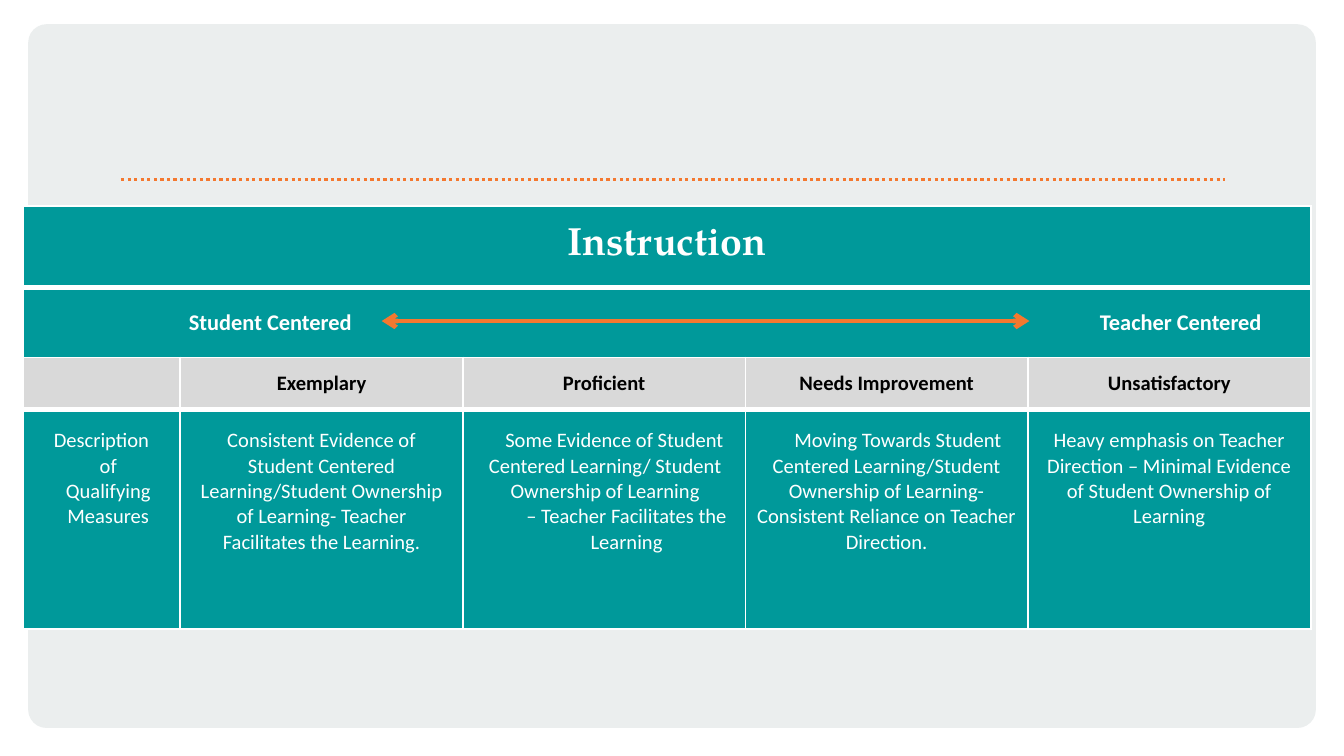
from lxml import etree
from pptx import Presentation
from pptx.dml.color import RGBColor
from pptx.enum.dml import MSO_LINE_DASH_STYLE as Dash
from pptx.enum.shapes import MSO_CONNECTOR as Connector, MSO_SHAPE as Shape
from pptx.enum.text import MSO_ANCHOR as Anchor, PP_ALIGN as Align
from pptx.oxml.ns import qn
from pptx.util import Pt

TEAL, GREY, PANEL, ORANGE = "00999A", "D9D9D9", "EBEEEE", "F4782F"
WHITE, BLACK = "FFFFFF", "000000"
LEFT, TOP = 12.2, 110.2
COLUMNS = [84.4] + [151.4] * 4
ROWS = [43.8, 37.5, 28.1, 117.4]
LEVELS = ["Exemplary", "Proficient", "Needs Improvement", "Unsatisfactory"]
LABEL_TABS = [89, 577]

# One list per column: (text, left margin, first-line indent, right margin)
MEASURES = [
    [("Description of Qualifying Measures", 19.4, -7.2, 12.2)],
    [("Consistent Evidence of Student Centered Learning/Student Ownership "
      "of Learning- Teacher Facilitates the Learning.", 8, 0, 8)],
    [("Some Evidence of Student Centered Learning/ Student Ownership of Learning",
      8.6, 10, 7.5),
     ("– Teacher Facilitates the Learning", 24, 0, 0)],
    [("Moving Towards Student Centered Learning/Student Ownership of Learning- "
      "Consistent Reliance on Teacher Direction.", 5.8, 12.2, 6)],
    [("Heavy emphasis on Teacher Direction – Minimal Evidence of Student "
      "Ownership of Learning", 5.8, 0, 6)],
]


def color(hex_value):
    return RGBColor.from_string(hex_value)


def add_panel(page):
    panel = page.shapes.add_shape(
        Shape.ROUNDED_RECTANGLE, Pt(15.1), Pt(13), Pt(689.8), Pt(377))
    panel.adjustments[0] = 0.026
    panel.shadow.inherit = False
    panel.fill.solid()
    panel.fill.fore_color.rgb = color(PANEL)
    panel.line.fill.background()


def add_line(page, start, end, y, width, dash=None, arrows=False):
    line = page.shapes.add_connector(
        Connector.STRAIGHT, Pt(start), Pt(y), Pt(end), Pt(y))
    line.line.color.rgb = color(ORANGE)
    line.line.width = Pt(width)
    if dash:
        line.line.dash_style = dash
    if arrows:
        outline = line.line._get_or_add_ln()
        for tag in ("a:headEnd", "a:tailEnd"):
            etree.SubElement(outline, qn(tag), type="arrow")
    etree.SubElement(line._element.spPr, qn("a:effectLst"))


def style_cell(cell, fill, top=1, bottom=1):
    cell.margin_left = cell.margin_right = cell.margin_top = cell.margin_bottom = 0
    cell.vertical_anchor = Anchor.MIDDLE
    cell.fill.solid()
    cell.fill.fore_color.rgb = color(fill)
    sides = [("a:lnL", 1), ("a:lnR", 1), ("a:lnT", top), ("a:lnB", bottom)]
    for place, (tag, width) in enumerate(sides):
        border = etree.Element(qn(tag), w=str(Pt(width)))
        solid = etree.SubElement(border, qn("a:solidFill"))
        etree.SubElement(solid, qn("a:srgbClr"), val=WHITE)
        cell._tc.get_or_add_tcPr().insert(place, border)


def add_span(para, text, size, ink=WHITE, bold=False, font="Calibri"):
    span = para.add_run()
    span.text = text
    span.font.name = font
    span.font.size = Pt(size)
    span.font.bold = bold
    span.font.color.rgb = color(ink)


def fill_centered(cell, text, size, **style):
    para = cell.text_frame.paragraphs[0]
    para.alignment = Align.CENTER
    add_span(para, text, size, **style)


def fill_scale_labels(cell):
    para = cell.text_frame.paragraphs[0]
    para.alignment = Align.LEFT
    tabs = etree.SubElement(para._p.get_or_add_pPr(), qn("a:tabLst"))
    for stop in LABEL_TABS:
        etree.SubElement(tabs, qn("a:tab"), pos=str(Pt(stop)), algn="l")
    for label in ("Student Centered", "Teacher Centered"):
        add_span(para, "\t" + label, 12, bold=True)


def fill_measures(cell, entries):
    cell.vertical_anchor = Anchor.TOP
    cell.margin_top = Pt(9.8)
    frame = cell.text_frame
    for number, (text, left, indent, right) in enumerate(entries):
        para = frame.add_paragraph() if number else frame.paragraphs[0]
        para.alignment = Align.CENTER
        margins = para._p.get_or_add_pPr()
        for name, value in (("marL", left), ("marR", right), ("indent", indent)):
            margins.set(name, str(Pt(value)))
        add_span(para, text, 11)


def add_rubric(page):
    table = page.shapes.add_table(
        len(ROWS), len(COLUMNS), Pt(LEFT), Pt(TOP),
        Pt(sum(COLUMNS)), Pt(sum(ROWS))).table
    for column, width in zip(table.columns, COLUMNS):
        column.width = Pt(width)
    for row, height in zip(table.rows, ROWS):
        row.height = Pt(height)

    # Thick rules lie under the title row and above the measures
    looks = [(TEAL, 1, 3), (TEAL, 3, 1), (GREY, 1, 3), (TEAL, 3, 1)]
    for row, look in zip(table.rows, looks):
        for cell in row.cells:
            style_cell(cell, *look)
    for row in (0, 1):
        table.cell(row, 0).merge(table.cell(row, len(COLUMNS) - 1))

    fill_centered(table.cell(0, 0), "Instruction", 21, bold=True,
                  font="TeX Gyre Pagella")
    fill_scale_labels(table.cell(1, 0))
    for column, level in enumerate(LEVELS, 1):
        fill_centered(table.cell(2, column), level, 11, ink=BLACK, bold=True)
    for column, entries in enumerate(MEASURES):
        fill_measures(table.cell(3, column), entries)


def main():
    deck = Presentation()
    deck.slide_width, deck.slide_height = Pt(720), Pt(405)
    page = deck.slides.add_slide(deck.slide_layouts[6])

    # Backdrop
    add_panel(page)
    add_line(page, 64.8, 656, 96, 1.75, dash=Dash.ROUND_DOT)

    # Rubric, with the arrow between its two scale labels
    add_rubric(page)
    add_line(page, 204.5, 551.5, 172, 2.5, arrows=True)

    deck.save("out.pptx")


if __name__ == "__main__":
    main()
